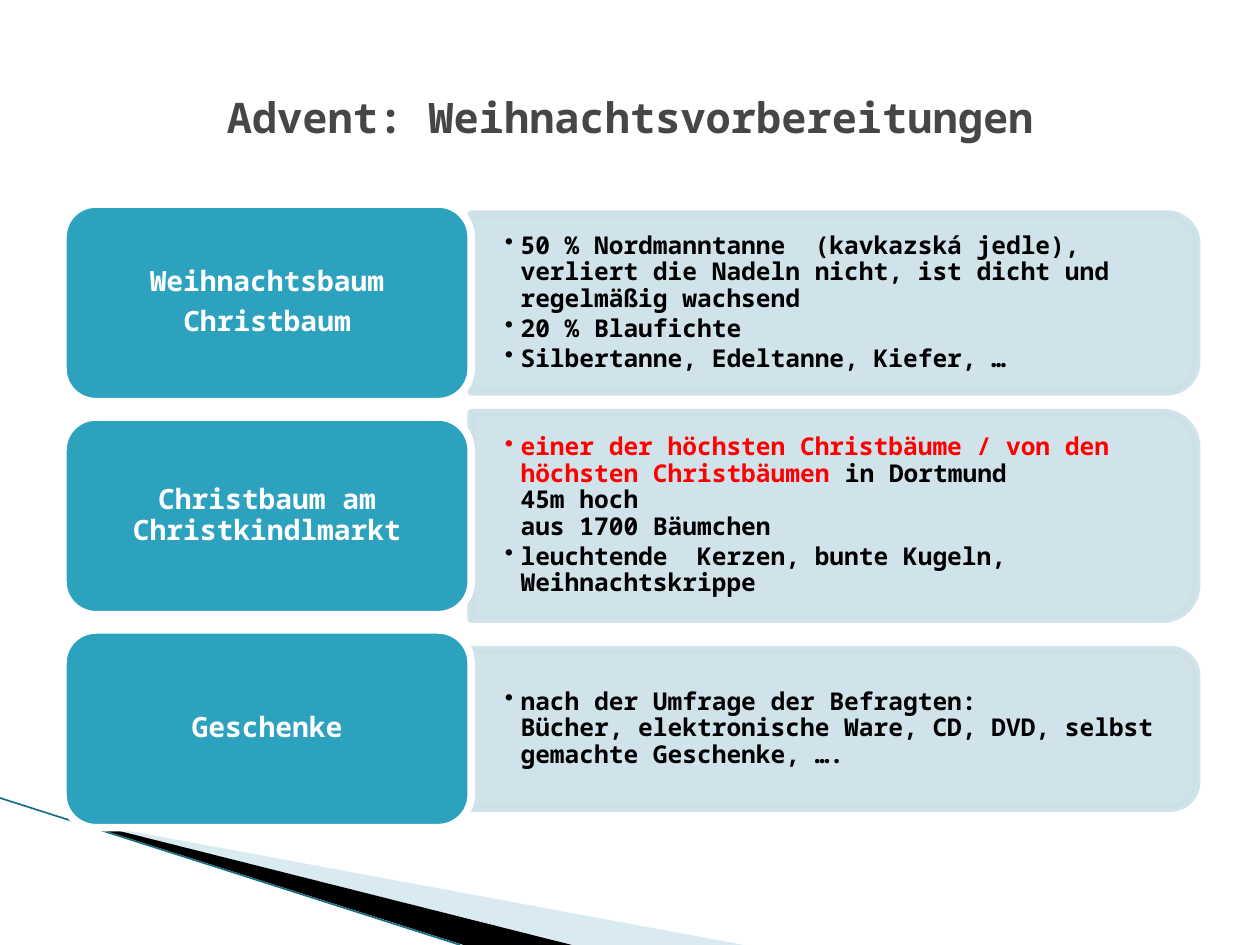
from lxml import etree
from pptx import Presentation
from pptx import util as u
from pptx.dml.color import RGBColor
from pptx.enum import shapes, text
from pptx.oxml import ns

Pt = u.Pt
TEAL = RGBColor(0x2D, 0xA2, 0xBF)
PALE = RGBColor(0xCD, 0xE0, 0xE8)
WEDGE = RGBColor(0xA0, 0xCB, 0xDC)
EDGE = RGBColor(0x1B, 0x6F, 0x84)
GREY = RGBColor(0x46, 0x46, 0x46)
RED = RGBColor(0xFF, 0x00, 0x00)
BLACK = RGBColor(0x00, 0x00, 0x00)
WHITE = RGBColor(0xFF, 0xFF, 0xFF)


class Deck:
    font = "Noto Sans Mono"
    border = 4.33

    def __init__(self, width, height):
        self.prs = Presentation()
        self.prs.slide_width, self.prs.slide_height = Pt(width), Pt(height)
        self.s = self.prs.slides.add_slide(self.prs.slide_layouts[6])

    def set_alpha(self, sp, percent):
        for clr in sp._element.spPr.iter(ns.qn("a:srgbClr")):
            etree.SubElement(clr, ns.qn("a:alpha"), val=str(percent * 1000))

    def paint(self, sp, fill, line=None, alpha=None):
        sp.shadow.inherit = False
        sp.fill.solid()
        sp.fill.fore_color.rgb = fill
        if line is None:
            sp.line.fill.background()
        else:
            sp.line.color.rgb = line
            sp.line.width = Pt(self.border)
        if alpha:
            self.set_alpha(sp, alpha)

    def polygon(self, points, fill, alpha=None):
        pts = [(Pt(x), Pt(y)) for x, y in points]
        fb = self.s.shapes.build_freeform(*pts[0])
        fb.add_line_segments(pts[1:], close=True)
        self.paint(fb.convert_to_shape(), fill, alpha=alpha)

    def line(self, x1, y1, x2, y2, color, width):
        c = self.s.shapes.add_connector(
            shapes.MSO_CONNECTOR.STRAIGHT, Pt(x1), Pt(y1), Pt(x2), Pt(y2))
        c.line.color.rgb = color
        c.line.width = Pt(width)
        etree.SubElement(c._element.spPr, ns.qn("a:effectLst"))

    def frame(self, sp, inset_x, inset_y):
        tf = sp.text_frame
        tf.word_wrap = True
        tf.vertical_anchor = text.MSO_ANCHOR.MIDDLE
        tf.margin_left = tf.margin_right = Pt(inset_x)
        tf.margin_top = tf.margin_bottom = Pt(inset_y)
        return tf

    def add_text(self, tf, paragraphs, size, spacing=1.0, after=0,
                 align=text.PP_ALIGN.CENTER, bullet=False):
        """Each paragraph is a list of (text, color) runs; \\n breaks a line."""
        for i, runs in enumerate(paragraphs):
            p = tf.paragraphs[0] if i == 0 else tf.add_paragraph()
            p.alignment = align
            p.line_spacing = spacing
            p.space_after = Pt(after)
            if bullet:
                pPr = p._p.get_or_add_pPr()
                pPr.set("marL", str(Pt(9)))
                pPr.set("indent", str(-Pt(9)))
                etree.SubElement(pPr, ns.qn("a:buChar"), char="•")
            for words, color in runs:
                for n, part in enumerate(words.split("\n")):
                    if n:
                        p.add_line_break()
                    r = p.add_run()
                    r.text = part
                    r.font.name, r.font.size, r.font.bold = self.font, Pt(size), True
                    r.font.color.rgb = color

    def title(self, x, y, w, h, words):
        sp = self.s.shapes.add_textbox(Pt(x), Pt(y), Pt(w), Pt(h))
        self.add_text(self.frame(sp, 7.2, 3.6), [[(words, GREY)]], 24)

    def panel(self, x, middle, w, h, paragraphs):
        # Turned a quarter so that the round corners lie on the right
        sp = self.s.shapes.add_shape(
            shapes.MSO_SHAPE.ROUND_2_SAME_RECTANGLE,
            Pt(x + (w - h) / 2), Pt(middle - w / 2), Pt(h), Pt(w))
        sp.rotation = 90
        self.paint(sp, PALE, PALE, 90)
        box = self.s.shapes.add_textbox(
            Pt(x), Pt(middle - h / 2 + 5), Pt(w - 4.5), Pt(h - 10))
        self.add_text(self.frame(box, 19.2, 9.6), paragraphs, 14, 0.9, 2.1,
                      text.PP_ALIGN.LEFT, bullet=True)

    def card(self, x, y, w, h, lines):
        sp = self.s.shapes.add_shape(
            shapes.MSO_SHAPE.ROUNDED_RECTANGLE, Pt(x), Pt(y), Pt(w), Pt(h))
        self.paint(sp, TEAL, WHITE)
        self.add_text(self.frame(sp, 4.8, 2.4), [[(t, WHITE)] for t in lines],
                      16, 0.9, 5.6)


# Topic lines, panel height, panel paragraphs
ROWS = [
    (["Weihnachtsbaum", "Christbaum"], 101.5, [
        [("50 % Nordmanntanne  (kavkazská jedle), verliert die Nadeln nicht, "
          "ist dicht und regelmäßig wachsend", BLACK)],
        [("20 % Blaufichte", BLACK)],
        [("Silbertanne, Edeltanne, Kiefer, …", BLACK)]]),
    (["Christbaum am Christkindlmarkt"], 118, [
        [("einer der höchsten Christbäume / von den höchsten Christbäumen ", RED),
         ("in Dortmund\n45m hoch\naus 1700 Bäumchen", BLACK)],
        [("leuchtende  Kerzen, bunte Kugeln, Weihnachtskrippe", BLACK)]]),
    (["Geschenke"], 90.5, [
        [("nach der Umfrage der Befragten:\nBücher, elektronische Ware, CD, DVD, "
          "selbst gemachte Geschenke, ….", BLACK)]]),
]
LEFT, TOP, CARD_W, CARD_H, PITCH, PANEL_W = 36, 116.6, 233.3, 113, 121.7, 414.5


def main():
    d = Deck(720, 540)

    # Corner decoration
    d.polygon([(39.6, 468.5), (425, 540), (328, 540), (39.6, 468)], WEDGE, 40)
    d.polygon([(38.2, 467.3), (327, 540), (265, 540), (38.9, 468)], BLACK)
    d.line(0, 456, 263, 540, EDGE, 0.95)

    # Topic rows
    for i, (topic, panel_h, details) in enumerate(ROWS):
        y = TOP + i * PITCH
        d.panel(LEFT + CARD_W, y + CARD_H / 2, PANEL_W, panel_h, details)
        d.card(LEFT, y, CARD_W, CARD_H, topic)

    # Title
    d.title(36, 21.6, 648, 90, "Advent: Weihnachtsvorbereitungen")
    d.prs.save("out.pptx")


if __name__ == "__main__":
    main()
